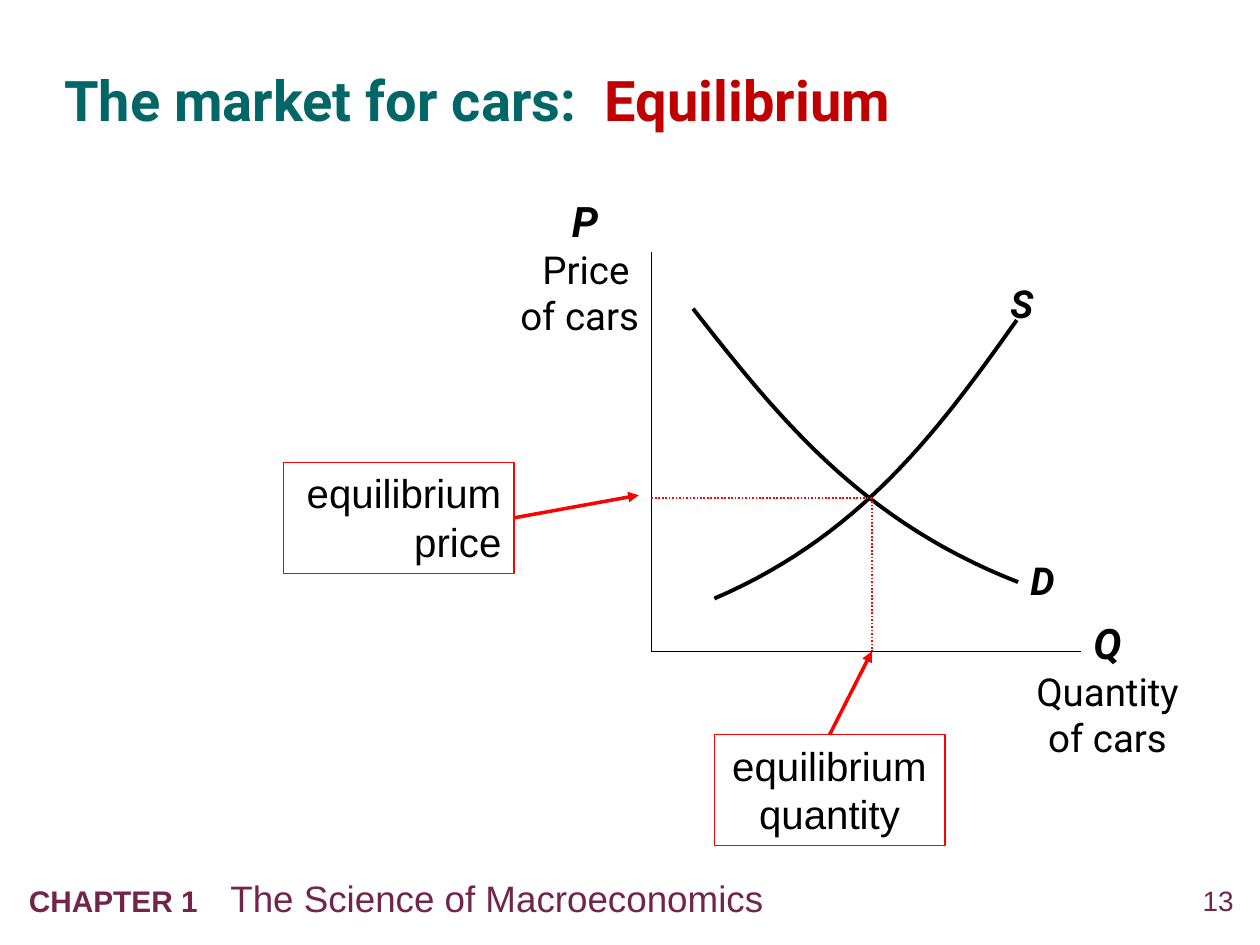
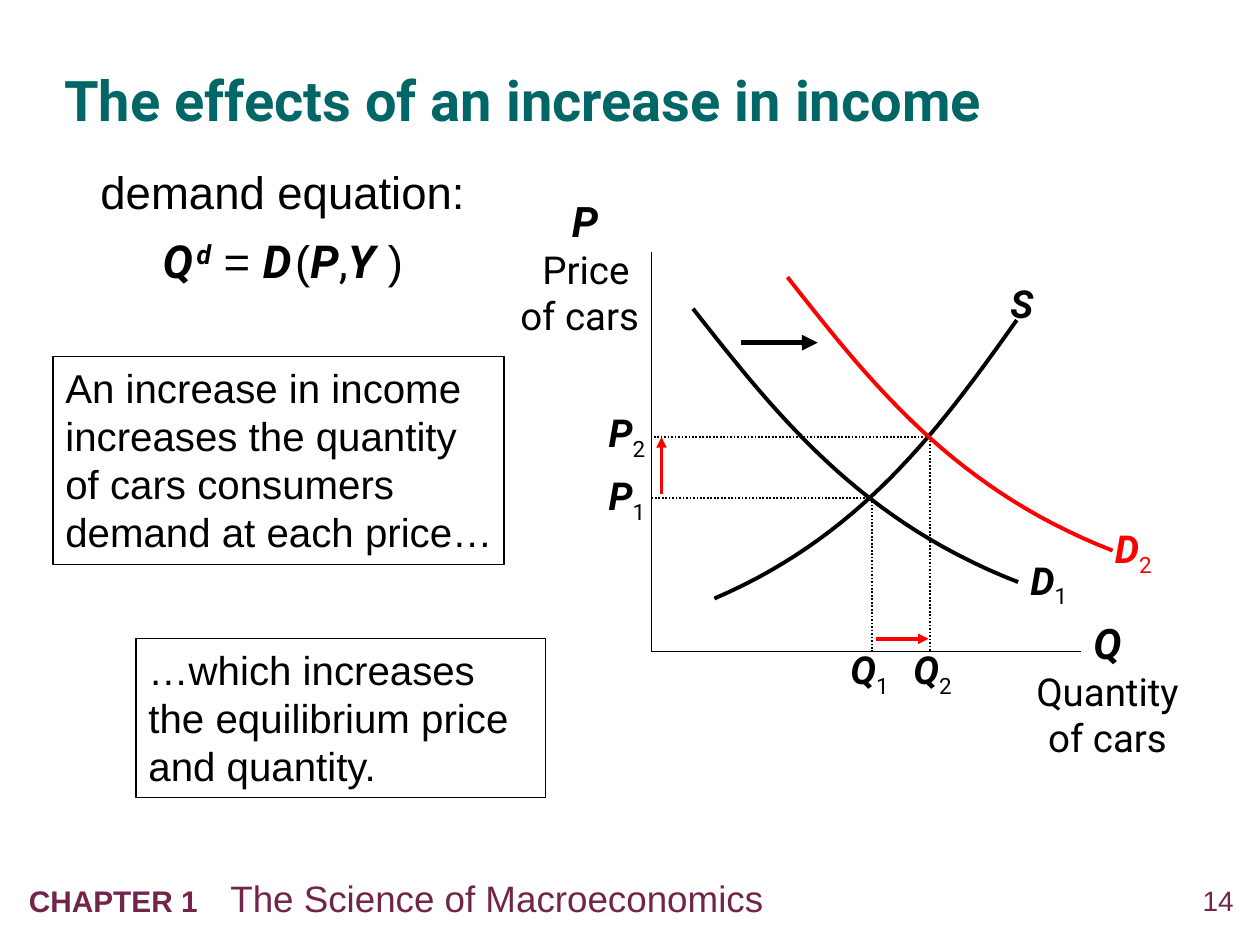
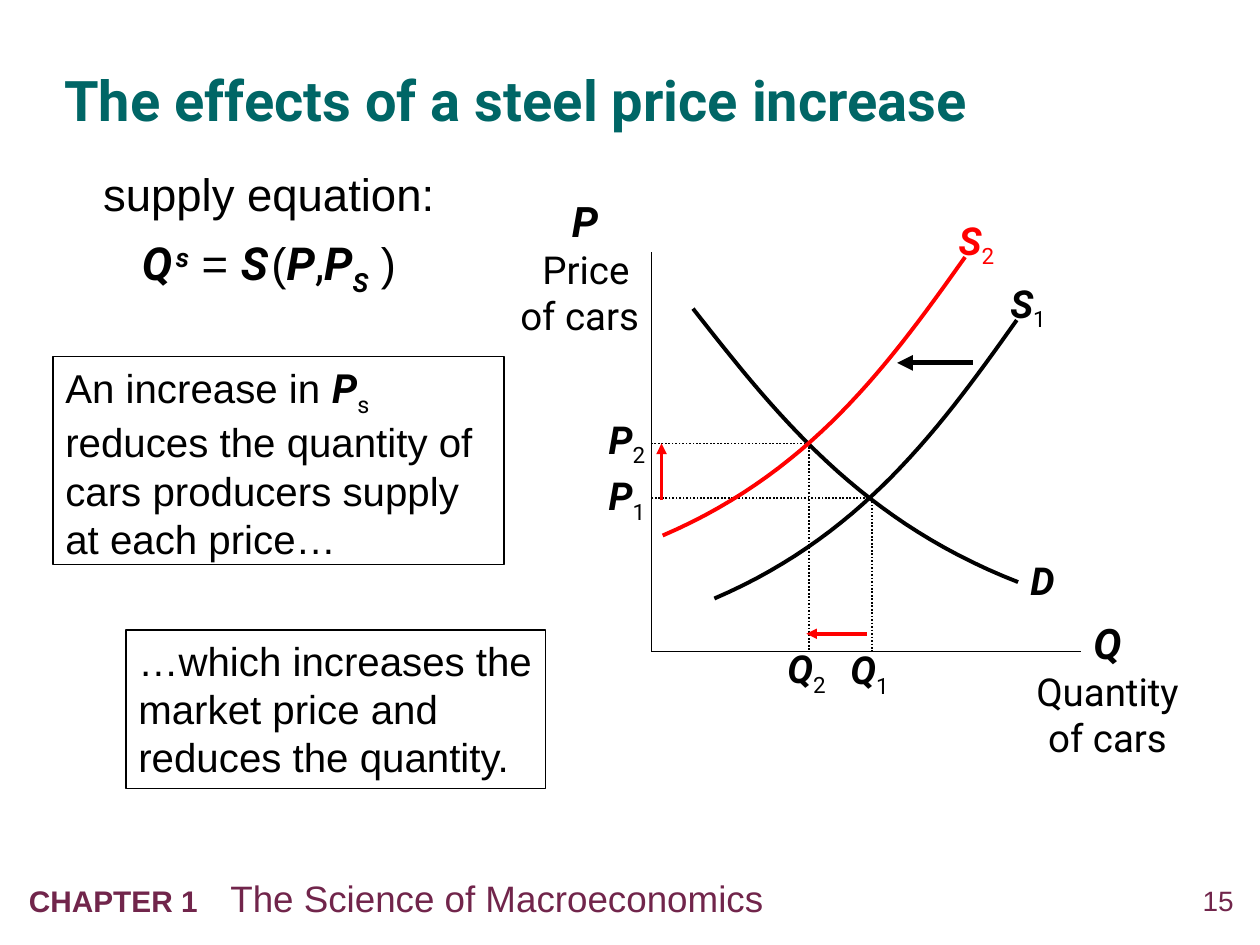
from dataclasses import dataclass, replace

from lxml import etree
from pptx import Presentation
from pptx import util as u
from pptx.dml.color import RGBColor
from pptx.enum import dml, shapes, text
from pptx.oxml.ns import qn

COLORS = {
    "ink": "000000",
    "paper": "FFFFFF",
    "title": "006666",
    "accent": "C00000",
    "footer": "71254B",
    "highlight": "FF0000",
}
BODY_FONT = "Arial"
MATH_FONT = "Roboto"
ALIGN = text.PP_ALIGN
AXIS_LEFT, AXIS_TOP, AXIS_RIGHT, AXIS_BOTTOM = 5.17, 2, 8.58, 5.17
DEMAND_CURVE = ((5.5, 2.45), (6.16, 3.29), (6.82, 4.13), (8.08, 4.62))
SUPPLY_CURVE = ((8.07, 2.54), (7.46, 3.4), (6.84, 4.25), (5.67, 4.75))
DEMAND_SHIFT = (0.75, -0.25)
SUPPLY_SHIFT = (-0.41, -0.5)
CURVE_STEPS = 30
TEXT_INSETS = (0.1, 0.05, 0.1, 0.05)
CURVE_LABEL_INSETS = (0.1, 0.05, 0, 0.05)
NO_INSETS = (0, 0, 0, 0)


@dataclass
class Run:
    text: str
    size: float = 22
    font: str = BODY_FONT
    color: str = "ink"
    bold: bool = False
    italic: bool = False
    baseline: int = 0


def symbol(letter, size=22, color="ink", baseline=0):
    return Run(letter, size, MATH_FONT, color, True, True, baseline)


def subscript(letter, size=22, color="ink"):
    return Run(letter, size, MATH_FONT, color, baseline=-25)


def rgb(name):
    return RGBColor.from_string(COLORS[name])


def add_runs(paragraph, runs):
    for item in runs:
        run = paragraph.add_run()
        run.text = item.text
        font = run.font
        font.name, font.size = item.font, u.Pt(item.size)
        font.bold, font.italic = item.bold, item.italic
        font.color.rgb = rgb(item.color)
        if item.baseline:
            run._r.get_or_add_rPr().set("baseline", str(item.baseline * 1000))


def fill_text(shape, paragraphs, insets=TEXT_INSETS, align=ALIGN.LEFT,
              anchor=text.MSO_ANCHOR.TOP):
    frame = shape.text_frame
    frame.word_wrap = True
    frame.auto_size = text.MSO_AUTO_SIZE.NONE
    frame.vertical_anchor = anchor
    (frame.margin_left, frame.margin_top,
     frame.margin_right, frame.margin_bottom) = map(u.Inches, insets)
    for index, runs in enumerate(paragraphs):
        paragraph = frame.add_paragraph() if index else frame.paragraphs[0]
        paragraph.alignment = align
        add_runs(paragraph, runs)
    return frame.paragraphs


def add_text(slide, at, paragraphs, **options):
    shape = slide.shapes.add_textbox(*map(u.Inches, at))
    return fill_text(shape, paragraphs, **options)


def add_title(slide, *runs):
    title = slide.shapes.title
    title.left, title.top, title.width, title.height = map(
        u.Inches, (0.51, 0.26, 9.02, 1.03))
    paragraphs = fill_text(title, [runs], insets=NO_INSETS,
                           anchor=text.MSO_ANCHOR.MIDDLE)
    paragraphs[0].line_spacing = 1.05


def title_run(words, color="title"):
    return Run(words, 32, MATH_FONT, color, bold=True)


def add_footer(slide, number):
    add_text(slide, (9.24, 7.01, 0.55, 0.32),
             [[Run(str(number), 16, color="footer")]],
             insets=NO_INSETS, align=ALIGN.RIGHT)
    chapter = add_text(slide, (0.13, 6.9, 8.18, 0.45), [[
        Run("CHAPTER 1\t", 17, color="footer", bold=True),
        Run("The Science of Macroeconomics", 21, color="footer")]])[0]
    tabs = etree.SubElement(chapter._p.get_or_add_pPr(), qn("a:tabLst"))
    etree.SubElement(tabs, qn("a:tab"), pos=str(u.Inches(1.6)), algn="l")


def add_line(slide, start, end, color="ink", width=0.75, dotted=False, arrow=False):
    connector = slide.shapes.add_connector(
        shapes.MSO_CONNECTOR.STRAIGHT, *map(u.Inches, (*start, *end)))
    connector.line.color.rgb = rgb(color)
    connector.line.width = u.Pt(width)
    if dotted:
        connector.line.dash_style = dml.MSO_LINE.ROUND_DOT
    properties = connector._element.spPr
    if arrow:
        etree.SubElement(properties.find(qn("a:ln")), qn("a:tailEnd"), type="triangle")
    etree.SubElement(properties, qn("a:effectLst"))
    return connector


def add_arrow(slide, start, end, color="highlight", width=2):
    return add_line(slide, start, end, color, width, arrow=True)


def add_guides(slide, quantity, price, color="ink"):
    crossing = (quantity, price)
    for foot in ((AXIS_LEFT, price), (quantity, AXIS_BOTTOM)):
        add_line(slide, crossing, foot, color, 1, dotted=True)


def bezier_point(controls, t):
    weights = ((1 - t) ** 3, 3 * t * (1 - t) ** 2, 3 * t ** 2 * (1 - t), t ** 3)
    return tuple(u.Inches(sum(w * point[axis] for w, point in zip(weights, controls)))
                 for axis in (0, 1))


def add_curve(slide, controls, shift=(0, 0), color="ink"):
    moved = [(x + shift[0], y + shift[1]) for x, y in controls]
    points = [bezier_point(moved, step / CURVE_STEPS) for step in range(CURVE_STEPS + 1)]
    builder = slide.shapes.build_freeform(*points[0])
    builder.add_line_segments(points[1:], close=False)
    curve = builder.convert_to_shape()
    curve.shadow.inherit = False
    curve.fill.background()
    curve.line.color.rgb = rgb(color)
    curve.line.width = u.Pt(2.25)


def add_label(slide, left, top, letter, index="", color="ink", insets=NO_INSETS):
    runs = [symbol(letter, color=color)]
    if index:
        runs.append(subscript(index, color=color))
    add_text(slide, (left, top, 0.6, 0.47), [runs], insets=insets)


def add_curve_label(slide, left, top, letter, index="", color="ink"):
    add_label(slide, left, top, letter, index, color, CURVE_LABEL_INSETS)


def add_note(slide, at, runs, border="ink", align=ALIGN.LEFT, insets=TEXT_INSETS):
    note = slide.shapes.add_shape(shapes.MSO_SHAPE.RECTANGLE, *map(u.Inches, at))
    note.shadow.inherit = False
    note.fill.solid()
    note.fill.fore_color.rgb = rgb("paper")
    note.line.color.rgb = rgb(border)
    note.line.width = u.Pt(0.75)
    fill_text(note, [[replace(run, size=23) for run in runs]], insets=insets, align=align)
    return note


def add_market(slide, supply_index="", demand_index=""):
    origin = (AXIS_LEFT, AXIS_BOTTOM)
    add_line(slide, (AXIS_LEFT, AXIS_TOP), origin)
    add_line(slide, origin, (AXIS_RIGHT, AXIS_BOTTOM))
    add_text(slide, (8.08, 4.85, 1.42, 1.23),
             [[symbol("Q", 24), Run(" Quantity of cars", font=MATH_FONT)]],
             align=ALIGN.CENTER)
    price_title = add_text(
        slide, (3.92, 1.5, 1.25, 1.23),
        [[symbol("P", 24)], [Run("Price ", font=MATH_FONT)],
         [Run("of cars", font=MATH_FONT)]], align=ALIGN.RIGHT)[0]
    price_title.alignment = ALIGN.LEFT
    price_title._p.get_or_add_pPr().set("marL", str(u.Inches(0.52)))
    add_curve(slide, SUPPLY_CURVE)
    add_curve_label(slide, 7.92, 2.17, "S", supply_index)
    add_curve(slide, DEMAND_CURVE)
    add_curve_label(slide, 8.08, 4.37, "D", demand_index)


def add_first_equilibrium(slide):
    add_guides(slide, 6.92, 3.95)
    add_label(slide, 6.75, 5.13, "Q", "1")
    add_label(slide, 4.83, 3.75, "P", "1")


def add_equation(slide, left, top, heading, function, exponent, arguments):
    size = 26
    thin_space = symbol(" ", 8)
    formula = [symbol("Q", size), thin_space, symbol(exponent, size, baseline=30),
               Run(" = ", size), symbol(function, size), thin_space, Run("(", size),
               symbol("P", size), Run(",", size, MATH_FONT), *arguments, Run(" )", size)]
    paragraphs = add_text(slide, (left, top, 3.35, 1.12),
                          [[Run(heading, size)], formula], align=ALIGN.CENTER)
    for paragraph in paragraphs:
        paragraph.line_spacing = 1.05
    paragraphs[1].space_before = u.Pt(6.5)


def build_equilibrium(slide):
    add_title(slide, title_run("The market for cars:  "), title_run("Equilibrium", "accent"))
    add_market(slide)
    add_guides(slide, 6.92, 3.95, "highlight")
    price_note = add_note(slide, (2.25, 3.67, 1.83, 0.88), [Run("equilibrium price")],
                          "highlight", ALIGN.RIGHT)
    add_arrow(slide, (4.08, 4.11), (5.07, 3.93)).begin_connect(price_note, 3)
    quantity_note = add_note(slide, (5.67, 5.83, 1.83, 0.88),
                             [Run("equilibrium quantity")], "highlight", ALIGN.CENTER)
    add_arrow(slide, (6.58, 5.83), (6.92, 5.17)).begin_connect(quantity_note, 0)


def build_income_increase(slide):
    add_title(slide, title_run("The effects of an increase in income"))
    add_market(slide, demand_index="1")
    add_first_equilibrium(slide)
    add_note(slide, (0.42, 2.83, 3.58, 1.65),
             [Run("An increase in income increases the quantity "
                  "of cars consumers demand at each price…")],
             insets=(0.1, 0.05, 0.05, 0.05))
    add_note(slide, (1.08, 5.07, 3.25, 1.26),
             [Run("…which increases the equilibrium price and quantity.")])
    add_guides(slide, 7.38, 3.47)
    add_label(slide, 4.83, 3.25, "P", "2")
    add_label(slide, 7.25, 5.13, "Q", "2")
    add_arrow(slide, (5.25, 3.92), (5.25, 3.47))
    add_arrow(slide, (6.95, 5.07), (7.37, 5.07))
    add_arrow(slide, (5.88, 2.72), (6.49, 2.72), "ink", 3)
    add_curve(slide, DEMAND_CURVE, DEMAND_SHIFT, "highlight")
    add_curve_label(slide, 8.75, 4.12, "D", "2", "highlight")
    add_equation(slide, 0.57, 1.23, "demand equation:", "D", "d", [symbol("Y", 26)])


def build_steel_price(slide):
    add_title(slide, title_run("The effects of a steel price increase"))
    add_market(slide, supply_index="1")
    add_first_equilibrium(slide)
    add_note(slide, (0.42, 2.83, 3.58, 1.65),
             [Run("An increase in "), symbol("P"), subscript("s"),
              Run(" reduces the quantity of cars producers supply at each price…")])
    add_note(slide, (1, 5, 3.33, 1.26),
             [Run("…which increases the market price and reduces the quantity.")])
    add_guides(slide, 6.42, 3.52)
    add_label(slide, 4.83, 3.3, "P", "2")
    add_label(slide, 6.25, 5.12, "Q", "2")
    add_arrow(slide, (5.25, 3.97), (5.25, 3.52))
    add_arrow(slide, (6.88, 5.03), (6.4, 5.03))
    add_curve(slide, SUPPLY_CURVE, SUPPLY_SHIFT, "highlight")
    add_curve_label(slide, 7.51, 1.67, "S", "2", "highlight")
    add_arrow(slide, (7.72, 2.88), (7.12, 2.88), "ink", 3)
    add_equation(slide, 0.46, 1.25, "supply equation:", "S", "s",
                 [symbol("P", 26), symbol("S", 26, baseline=-25)])


def main():
    presentation = Presentation()
    presentation.slide_width, presentation.slide_height = u.Inches(10), u.Inches(7.5)
    title_only = presentation.slide_layouts[5]
    builders = (build_equilibrium, build_income_increase, build_steel_price)
    for number, build in enumerate(builders, start=13):
        slide = presentation.slides.add_slide(title_only)
        add_footer(slide, number)
        build(slide)
    presentation.save("out.pptx")


if __name__ == "__main__":
    main()
